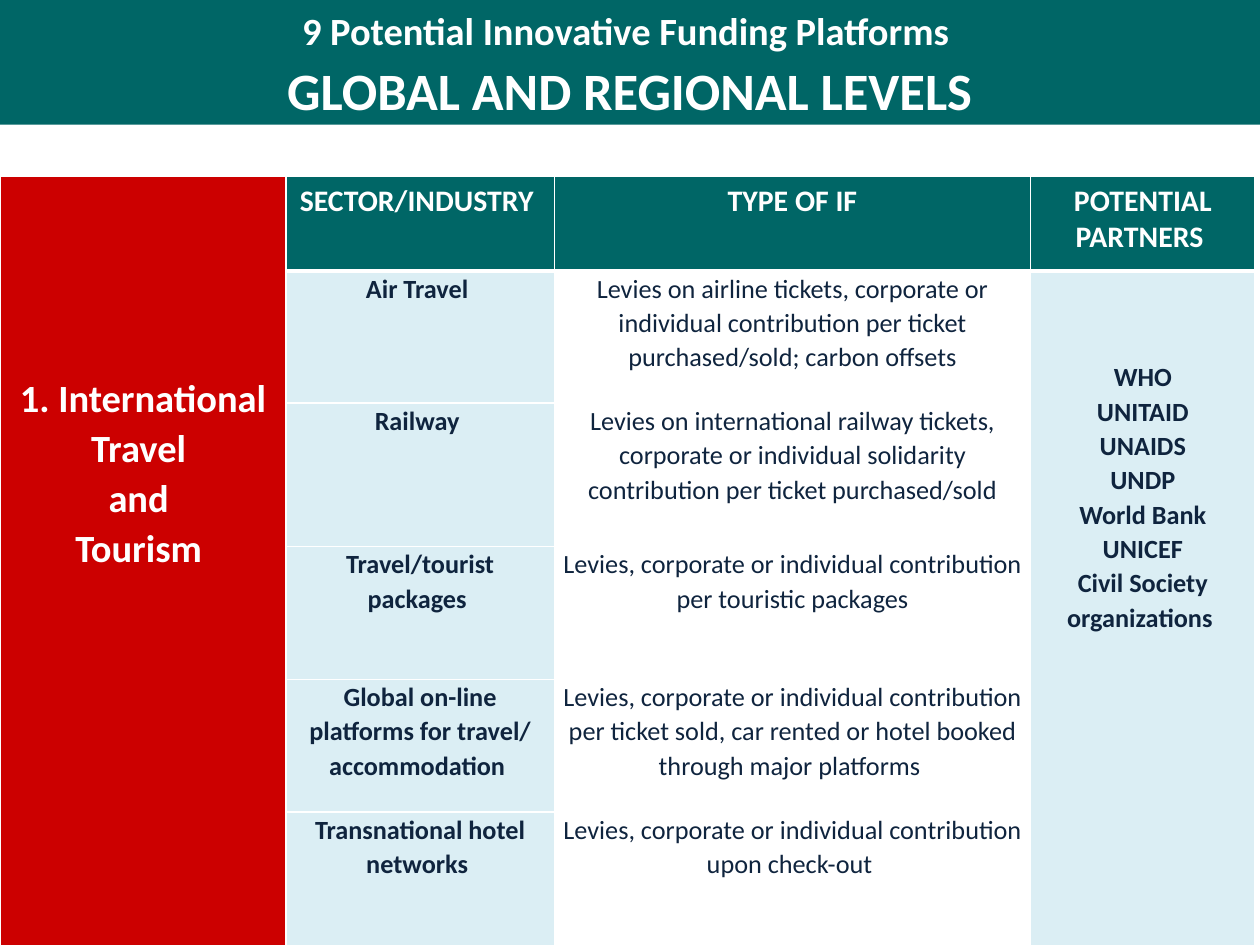
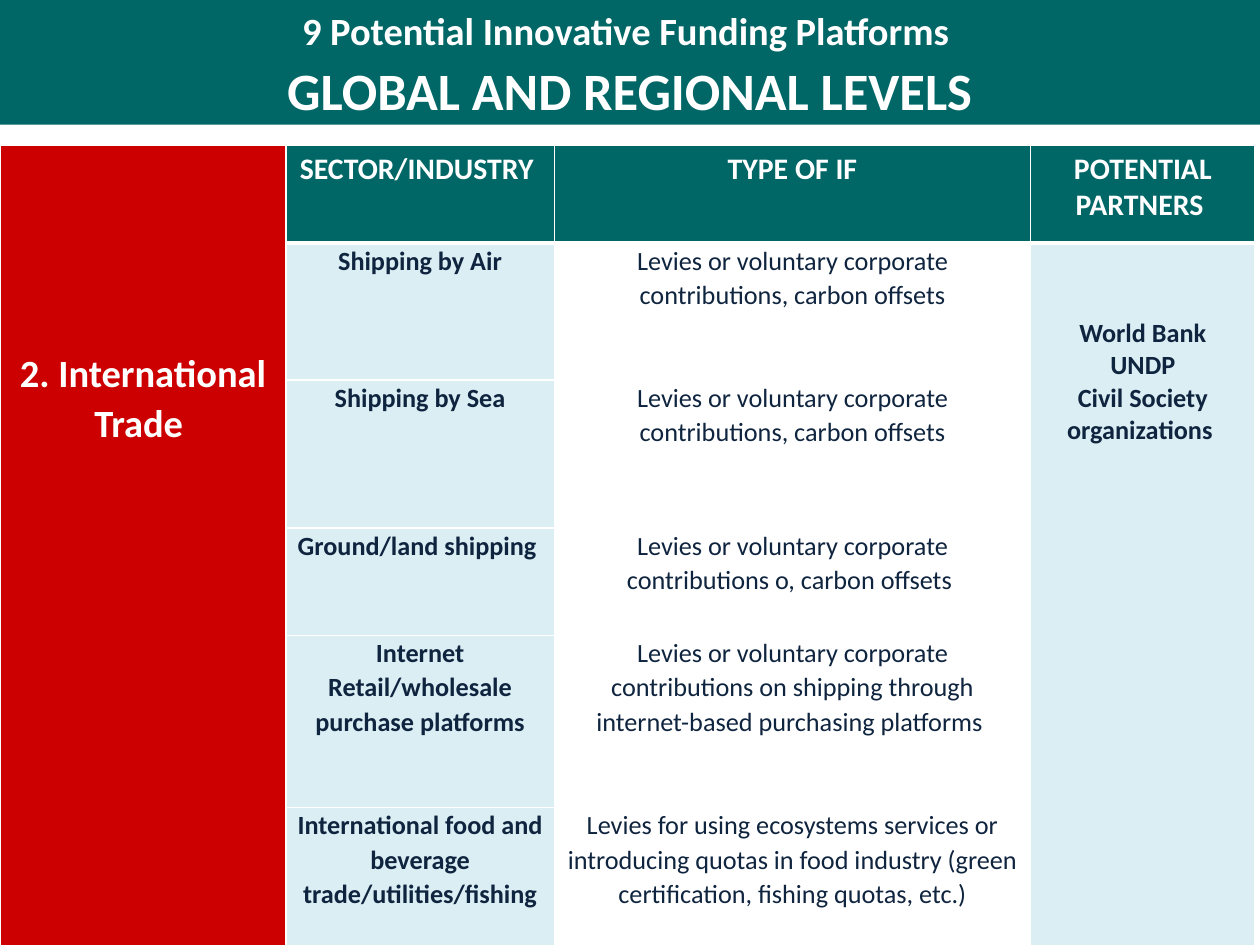
from lxml import etree
from pptx import Presentation
from pptx.dml.color import RGBColor
from pptx.enum import shapes, text
from pptx.oxml import ns
from pptx.util import Pt

SLIDE_WIDTH, SLIDE_HEIGHT = 720, 540
TEAL, RED, PALE_BLUE = "006666", "CC0000", "DBEEF4"
WHITE, NAVY = "FFFFFF", "0F243E"
FONT = "Calibri"
LINE_SPACING = 1.07

TITLE_LINES = [("9 Potential Innovative Funding Platforms ", 22),
               ("GLOBAL AND REGIONAL LEVELS", 30)]
TITLE_BOX = (0, 0, SLIDE_WIDTH, 71.3)
HEADINGS = ["SECTOR/INDUSTRY ", "TYPE OF IF", "POTENTIAL PARTNERS "]
COLUMN_WIDTHS = [163.4, 153.4, 272.2, 128.2]

PLATFORMS = [
    {
        "name": "1. International Travel \nand \nTourism ",
        "name_inset": 112,
        "top": 100.8,
        "row_heights": [54, 75.6, 82, 75.8, 75.8, 75.8],
        "sectors": [
            ("Air Travel ",
             "Levies on airline tickets, corporate or individual contribution "
             "per ticket purchased/sold; carbon offsets"),
            ("Railway ",
             "Levies on international railway tickets, corporate or individual "
             "solidarity contribution per ticket purchased/sold"),
            ("Travel/tourist packages ",
             "Levies, corporate or individual contribution per touristic packages"),
            ("Global on-line platforms for travel/\naccommodation ",
             "Levies, corporate or individual contribution per ticket sold, "
             "car rented or hotel booked through major platforms "),
            ("Transnational hotel networks ",
             "Levies, corporate or individual contribution upon check-out "),
        ],
        "partners": "WHO\nUNITAID\nUNAIDS\nUNDP\nWorld Bank\nUNICEF\n"
                    "Civil Society organizations ",
        "partners_inset": 50.6,
        "partners_spacing": LINE_SPACING,
    },
    {
        "name": "2. International Trade ",
        "name_inset": 116,
        "top": 82.8,
        "row_heights": [56, 78.5, 84.4, 61.4, 98.4, 78.5],
        "sectors": [
            ("Shipping by Air",
             "Levies or voluntary corporate contributions, carbon offsets"),
            ("Shipping by Sea",
             "Levies or voluntary corporate contributions, carbon offsets"),
            ("Ground/land shipping ",
             "Levies or voluntary corporate contributions o, carbon offsets "),
            ("Internet Retail/wholesale purchase platforms",
             "Levies or voluntary corporate contributions on shipping through "
             "internet-based purchasing platforms "),
            ("International food and beverage trade/utilities/fishing",
             "Levies for using ecosystems services or introducing quotas in food "
             "industry (green certification, fishing quotas, etc.)"),
        ],
        "partners": "World Bank\nUNDP\nCivil Society organizations ",
        "partners_inset": 42.8,
        "partners_spacing": 1.0,
    },
]


def color(hex_string):
    return RGBColor.from_string(hex_string)


def fill_solid(target, hex_string):
    target.fill.solid()
    target.fill.fore_color.rgb = color(hex_string)


def style_paragraph(paragraph, size, hex_string, bold=True, spacing=LINE_SPACING):
    paragraph.alignment = text.PP_ALIGN.CENTER
    paragraph.line_spacing = spacing
    paragraph.font.name = FONT
    paragraph.font.size = Pt(size)
    paragraph.font.bold = bold
    paragraph.font.color.rgb = color(hex_string)


def add_borders(cell, bottom_width):
    properties = cell._tc.get_or_add_tcPr()
    for side, width in (("L", 1), ("R", 1), ("T", 1), ("B", bottom_width)):
        line = etree.SubElement(properties, ns.qn(f"a:ln{side}"), w=str(Pt(width)))
        solid = etree.SubElement(line, ns.qn("a:solidFill"))
        etree.SubElement(solid, ns.qn("a:srgbClr"), val=WHITE)


def fill_cell(cell, words, fill, size, hex_string=NAVY, bold=True,
              spacing=LINE_SPACING, side_inset=7.2, top_inset=3.6, bottom_width=1):
    add_borders(cell, bottom_width)
    fill_solid(cell, fill)
    cell.margin_left = cell.margin_right = Pt(side_inset)
    cell.margin_top = Pt(top_inset)
    cell.margin_bottom = Pt(0)
    cell.text = words
    for paragraph in cell.text_frame.paragraphs:
        style_paragraph(paragraph, size, hex_string, bold, spacing)


def add_title_band(slide, box):
    band = slide.shapes.add_shape(shapes.MSO_SHAPE.RECTANGLE, *map(Pt, box))
    band.shadow.inherit = False
    fill_solid(band, TEAL)
    band.line.fill.background()
    frame = band.text_frame
    frame.word_wrap = True
    frame.vertical_anchor = text.MSO_ANCHOR.MIDDLE
    for index, (words, size) in enumerate(TITLE_LINES):
        paragraph = frame.add_paragraph() if index else frame.paragraphs[0]
        paragraph.text = words
        style_paragraph(paragraph, size, WHITE)


def add_platform_table(slide, platform, left, top):
    row_heights = platform["row_heights"]
    frame = slide.shapes.add_table(
        len(row_heights), len(COLUMN_WIDTHS), Pt(left), Pt(top),
        Pt(sum(COLUMN_WIDTHS)), Pt(sum(row_heights)))
    table = frame.table
    table.horz_banding = False
    for column, width in zip(table.columns, COLUMN_WIDTHS):
        column.width = Pt(width)
    for row, height in zip(table.rows, row_heights):
        row.height = Pt(height)

    last_row, partners_column = len(row_heights) - 1, len(COLUMN_WIDTHS) - 1
    table.cell(0, 0).merge(table.cell(last_row, 0))
    table.cell(1, partners_column).merge(table.cell(last_row, partners_column))

    fill_cell(table.cell(0, 0), platform["name"], RED, 22, WHITE,
              top_inset=platform["name_inset"], bottom_width=3)
    for column, heading in enumerate(HEADINGS, start=1):
        fill_cell(table.cell(0, column), heading, TEAL, 17, WHITE,
                  spacing=1.0, bottom_width=3)
    for row, (sector, funding) in enumerate(platform["sectors"], start=1):
        fill_cell(table.cell(row, 1), sector, PALE_BLUE, 15,
                  side_inset=5, top_inset=0)
        fill_cell(table.cell(row, 2), funding, WHITE, 15, bold=False,
                  side_inset=5, top_inset=0)
    fill_cell(table.cell(1, partners_column), platform["partners"], PALE_BLUE, 15,
              spacing=platform["partners_spacing"],
              top_inset=platform["partners_inset"])


def main():
    presentation = Presentation()
    presentation.slide_width = Pt(SLIDE_WIDTH)
    presentation.slide_height = Pt(SLIDE_HEIGHT)
    for platform in PLATFORMS:
        slide = presentation.slides.add_slide(presentation.slide_layouts[6])
        add_title_band(slide, TITLE_BOX)
        add_platform_table(slide, platform, 0, platform["top"])
    presentation.save("out.pptx")


if __name__ == "__main__":
    main()
